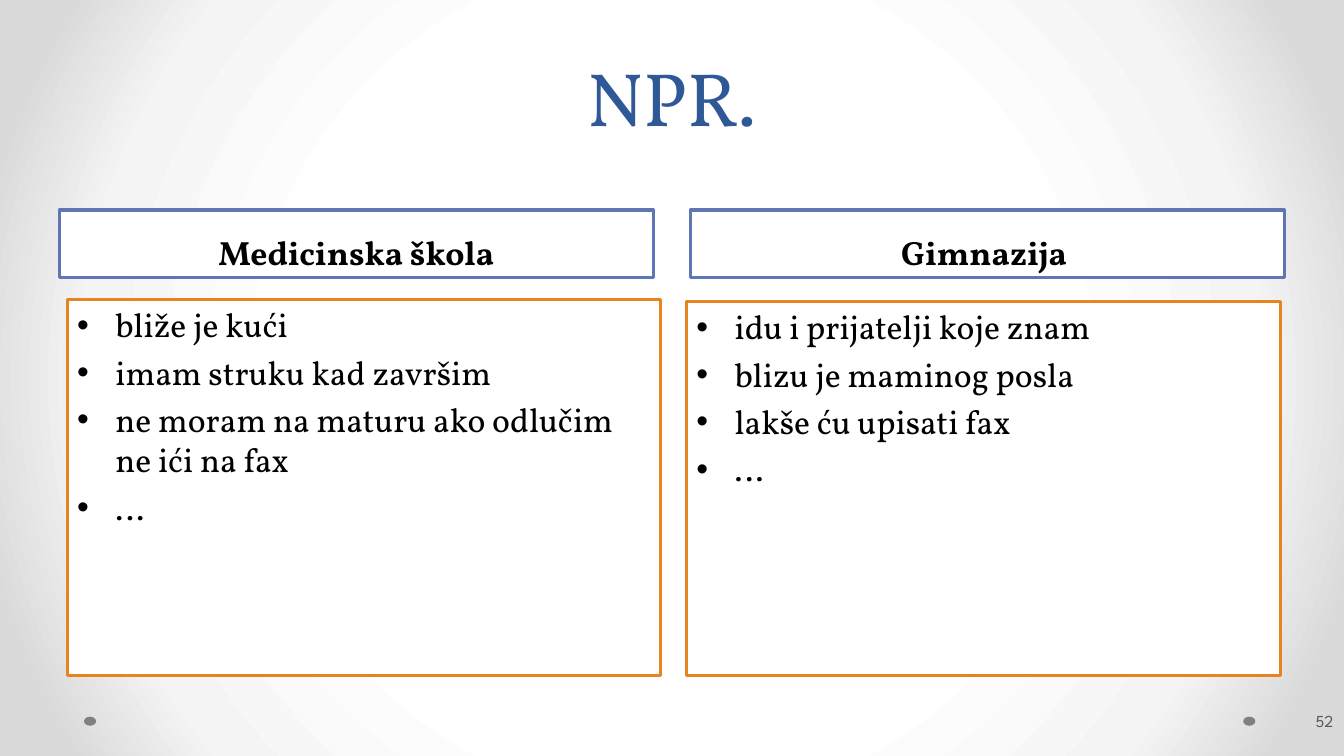
from lxml.etree import SubElement
from pptx import Presentation
from pptx.dml.color import RGBColor
from pptx.enum.shapes import MSO_SHAPE
from pptx.enum.text import MSO_ANCHOR, PP_ALIGN
from pptx.oxml.ns import qn
from pptx.util import Inches, Pt

COLS, ROWS = 160, 90
WHITE = RGBColor(0xFF, 0xFF, 0xFF)
BLACK = RGBColor(0, 0, 0)
NAVY = RGBColor(0x2F, 0x58, 0x97)
BLUE = RGBColor(0x60, 0x76, 0xB4)
ORANGE = RGBColor(0xE6, 0x84, 0x22)
GRAY = RGBColor(0x80, 0x80, 0x80)
DARK = RGBColor(0x59, 0x59, 0x59)
PALE = RGBColor(0xF4, 0xF4, 0xF4)
SILVER = RGBColor(0xDA, 0xDA, 0xDA)
GLOW = [(50, WHITE), (76, PALE), (92, SILVER)]

# Each side: head, head column, list column, list row, points
SIDES = [
    ("Medicinska škola", 7.08, 8, 35.64,
     ["bliže je kući", "imam struku kad završim",
      "ne moram na maturu ako odlučim ne ići na fax", "…"]),
    ("Gimnazija ", 82.2, 81.72, 35.88,
     ["idu i prijatelji koje znam", "blizu je maminog posla",
      "lakše ću upisati fax", "…"]),
]
WIDE = 70.68
BASE = 80.4


def write(frame, lines, size=24, font="Vollkorn", color=BLACK, bold=False,
          align=PP_ALIGN.LEFT, anchor=MSO_ANCHOR.TOP, before=0,
          pitch=None, bullet=False):
    frame.word_wrap = True
    frame.vertical_anchor = anchor
    for i, line in enumerate(lines):
        para = frame.add_paragraph() if i else frame.paragraphs[0]
        para.alignment = align
        para.space_before = Pt(before)
        if pitch:
            para.line_spacing = Pt(pitch)
        if bullet:
            props = para._p.get_or_add_pPr()
            props.set("marL", str(Inches(0.38)))
            props.set("indent", str(Inches(-0.38)))
            SubElement(props, qn("a:buFont"), typeface="Arial")
            SubElement(props, qn("a:buChar"), char="•")
        run = para.add_run()
        run.text = line
        run.font.size = Pt(size)
        run.font.name = font
        run.font.bold = bold
        run.font.color.rgb = color


class Page:
    def __init__(self, deck):
        self.slide = deck.slides.add_slide(deck.slide_layouts[6])
        self.col = deck.slide_width / COLS
        self.row = deck.slide_height / ROWS

    def place(self, x, y, w, h):
        """Turn grid units into slide lengths."""
        return (round(x * self.col), round(y * self.row),
                round(w * self.col), round(h * self.row))

    def glow(self, stops):
        """Fill the background with a round gradient."""
        self.slide.background.fill.gradient()
        grad = self.slide.element.find(".//" + qn("a:gradFill"))
        for part in list(grad):
            grad.remove(part)
        group = SubElement(grad, qn("a:gsLst"))
        for pos, color in stops:
            stop = SubElement(group, qn("a:gs"), pos=str(pos * 1000))
            SubElement(stop, qn("a:srgbClr"), val=str(color))
        ring = SubElement(grad, qn("a:path"), path="circle")
        SubElement(ring, qn("a:fillToRect"), l="50000", t="50000",
                   r="50000", b="50000")

    def shape(self, kind, spot, fill, line=None):
        item = self.slide.shapes.add_shape(kind, *self.place(*spot))
        item.shadow.inherit = False
        item.fill.solid()
        item.fill.fore_color.rgb = fill
        if line is None:
            item.line.fill.background()
        else:
            item.line.color.rgb = line
            item.line.width = Pt(2.25)
        return item

    def dot(self, x):
        self.shape(MSO_SHAPE.OVAL, (x, 85.32, 1.44, 1.08), GRAY)

    def box(self, spot, line, lines, **style):
        item = self.shape(MSO_SHAPE.RECTANGLE, spot, WHITE, line)
        write(item.text_frame, lines, before=5, **style)

    def text(self, spot, line, left=0.1, right=0.1, **style):
        frame = self.slide.shapes.add_textbox(*self.place(*spot)).text_frame
        frame.margin_left = Inches(left)
        frame.margin_right = Inches(right)
        write(frame, [line], **style)


def main():
    deck = Presentation()
    deck.slide_width, deck.slide_height = Inches(13.33), Inches(7.5)
    page = Page(deck)
    page.glow(GLOW)
    for x in (148, 10):
        page.dot(x)
    page.text((8, 0, 144, 17.4), "NPR.", size=54, color=NAVY, pitch=58,
              align=PP_ALIGN.CENTER, anchor=MSO_ANCHOR.BOTTOM)
    for head, left, x, y, points in SIDES:
        page.box((left, 25, WIDE, 8), BLUE, [head], bold=True,
                 align=PP_ALIGN.CENTER, anchor=MSO_ANCHOR.BOTTOM)
        page.box((x, y, WIDE, BASE - y), ORANGE, points, bullet=True)
    page.text((149.52, 83.4, 9.84, 4.8), "52", left=0.03, right=0.05,
              size=12, font="League Spartan", color=DARK,
              align=PP_ALIGN.RIGHT, anchor=MSO_ANCHOR.MIDDLE)
    deck.save("out.pptx")


if __name__ == "__main__":
    main()
